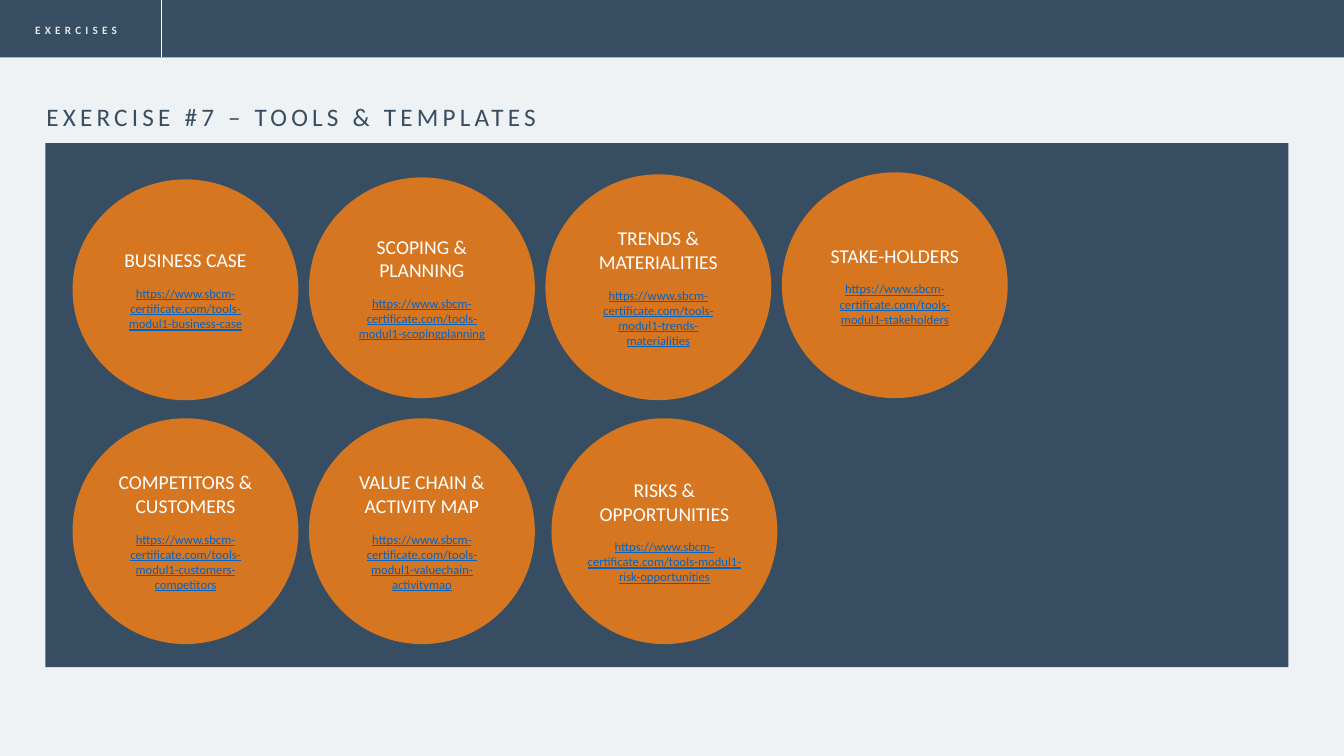
from pptx import Presentation
from pptx.dml.color import RGBColor
from pptx.enum.shapes import MSO_CONNECTOR, MSO_SHAPE
from pptx.enum.text import MSO_ANCHOR, MSO_AUTO_SIZE, PP_ALIGN
from pptx.oxml.ns import qn
from pptx.util import Inches, Pt
from lxml import etree

NAVY = RGBColor(0x37, 0x4D, 0x62)
ORANGE = RGBColor(0xD7, 0x76, 0x21)
PALE = RGBColor(0xEF, 0xF2, 0xF5)
GREY = RGBColor(0xE5, 0xE7, 0xE7)
WHITE = RGBColor(0xFF, 0xFF, 0xFF)
LINK = RGBColor(0x05, 0x63, 0xC1)
LEFT, CENTER = PP_ALIGN.LEFT, PP_ALIGN.CENTER
MIDDLE, NO_FIT = MSO_ANCHOR.MIDDLE, MSO_AUTO_SIZE.NONE
RECT, OVAL, STRAIGHT = MSO_SHAPE.RECTANGLE, MSO_SHAPE.OVAL, MSO_CONNECTOR.STRAIGHT

FONT = "Calibri"
URL = "https://www.sbcm-certificate.com/tools-modul1-"
PITCH = 2.345
DIAMETER = 2.24

# name, link ending, left offset, top offset, height, inset
TOOL_ROWS = [
    [
        ("BUSINESS CASE", "business-case", 0, 0.07, 2.19, 0.1),
        ("SCOPING & PLANNING", "scopingplanning", 0, 0.05, 2.19, 0.1),
        ("TRENDS & MATERIALITIES", "trends-materialities", 0, 0.02, DIAMETER, 0.1),
        ("STAKE-HOLDERS", "stakeholders", 0, 0, DIAMETER, 0.1),
    ],
    [
        ("COMPETITORS & CUSTOMERS", "customers-competitors", 0, 0, DIAMETER, 0.1),
        ("VALUE CHAIN & ACTIVITY MAP", "valuechain-activitymap", 0, 0, DIAMETER, 0.1),
        ("RISKS & OPPORTUNITIES", "risk-opportunities", 0.06, 0, DIAMETER, 0),
    ],
]


def write(p, text, size, color, align=LEFT, bold=False, underline=False,
          tracking=0, before=0):
    p.alignment = align
    p.space_before = Pt(before)
    r = p.add_run()
    r.text = text
    r.font.name = FONT
    r.font.size = Pt(size)
    r.font.bold = bold
    r.font.underline = underline
    r.font.color.rgb = color
    if tracking:
        r.font._element.set("spc", str(tracking * 100))


def add_filled(s, kind, x, y, w, h, color):
    sp = s.shapes.add_shape(kind, Inches(x), Inches(y), Inches(w), Inches(h))
    sp.shadow.inherit = False
    sp.fill.solid()
    sp.fill.fore_color.rgb = color
    sp.line.fill.background()
    return sp


def add_header(s, x, y, w, h):
    add_filled(s, RECT, x, y, w, h, NAVY)
    label = s.shapes.add_textbox(Inches(x + 0.25), Inches(y + 0.18), Inches(1.3), Inches(0.24))
    tf = label.text_frame
    tf.word_wrap = True
    write(tf.paragraphs[0], "EXERCISES", 8, GREY, bold=True, tracking=3)
    divider = s.shapes.add_connector(STRAIGHT, Inches(x + 1.6), Inches(y), Inches(x + 1.6), Inches(y + h))
    divider.line.color.rgb = WHITE
    divider.line.width = Pt(0.5)
    etree.SubElement(divider._element.spPr, qn("a:effectLst"))


def add_title(s, x, y, w, h):
    title = s.shapes.title
    title.left, title.top, title.width, title.height = map(Inches, (x, y, w, h))
    tf = title.text_frame
    tf.auto_size = NO_FIT
    tf.vertical_anchor = MIDDLE
    p = tf.paragraphs[0]
    p.line_spacing = 0.9
    write(p, "EXERCISE #7 – TOOLS & TEMPLATES", 18, NAVY, tracking=3)


def add_tool(s, x, y, w, h, name, ending, inset):
    tf = add_filled(s, OVAL, x, y, w, h, ORANGE).text_frame
    tf.word_wrap = True
    tf.vertical_anchor = MIDDLE
    tf.margin_left = tf.margin_right = Inches(inset)
    tf.margin_top = tf.margin_bottom = Inches(inset / 2)
    write(tf.paragraphs[0], name, 14, WHITE, align=CENTER)
    write(tf.add_paragraph(), URL + ending, 9, LINK, align=CENTER, underline=True, before=10)


def add_tools_panel(s, x, y, w, h):
    add_filled(s, RECT, x, y, w, h, NAVY)
    for row, tools in enumerate(TOOL_ROWS):
        for col, (name, ending, dx, dy, height, inset) in enumerate(tools):
            add_tool(s, x + 0.27 + col * PITCH + dx, y + 0.29 + row * 2.44 + dy,
                     DIAMETER, height, name, ending, inset)


def main():
    prs = Presentation()
    prs.slide_width, prs.slide_height = Inches(13.33), Inches(7.5)
    s = prs.slides.add_slide(prs.slide_layouts[5])
    s.background.fill.solid()
    s.background.fill.fore_color.rgb = PALE
    add_header(s, 0, 0, 13.33, 0.57)
    add_tools_panel(s, 0.45, 1.42, 12.33, 5.2)
    add_title(s, 0.36, 0.98, 6.95, 0.38)
    prs.save("out.pptx")


if __name__ == "__main__":
    main()
